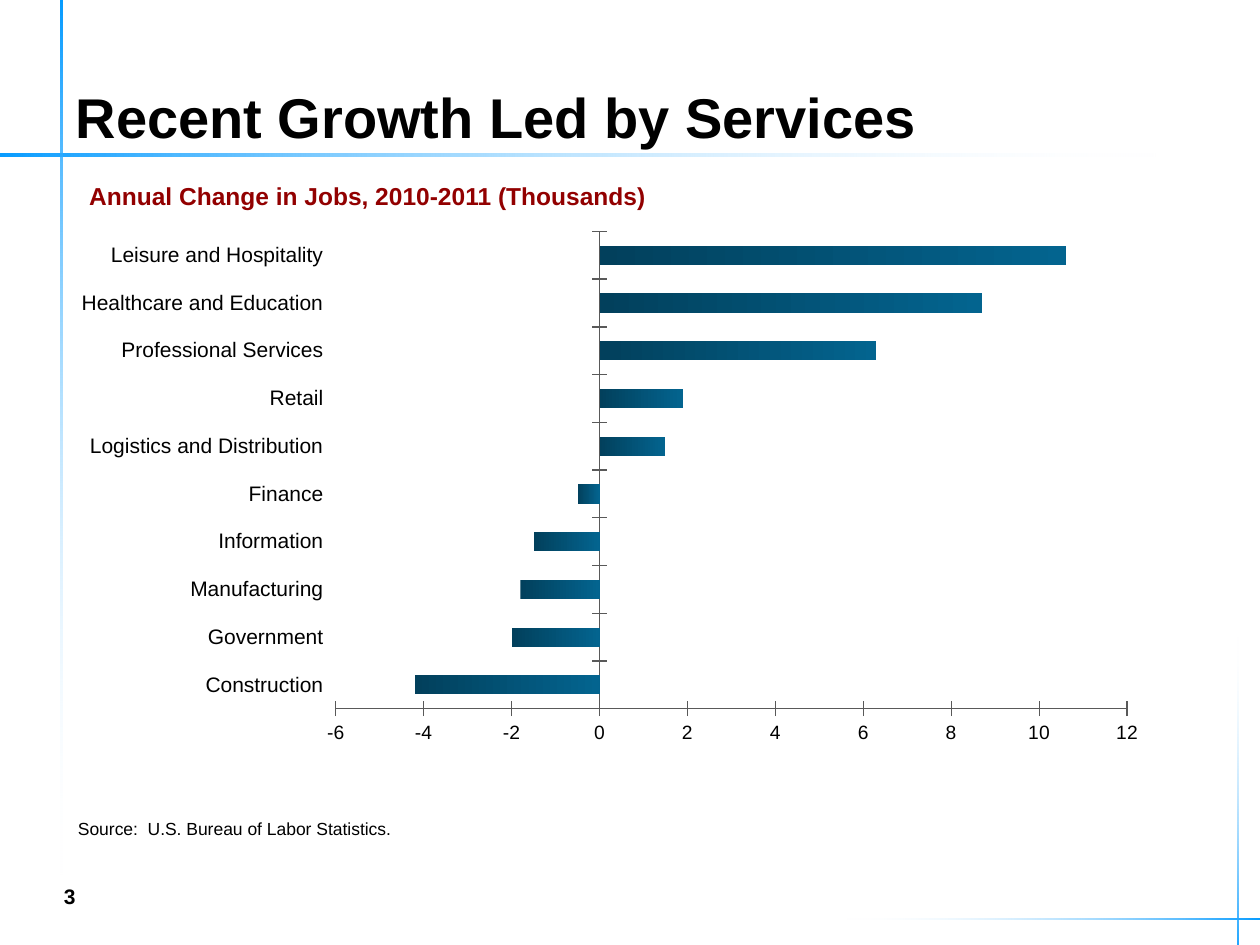
from typing import NamedTuple

from lxml.etree import SubElement
from pptx import Presentation
from pptx.chart.data import CategoryChartData
from pptx.dml.color import RGBColor
from pptx.enum.chart import XL_CHART_TYPE, XL_TICK_LABEL_POSITION, XL_TICK_MARK
from pptx.enum.shapes import MSO_SHAPE
from pptx.enum.text import MSO_ANCHOR, MSO_AUTO_SIZE, PP_ALIGN
from pptx.oxml import parse_xml
from pptx.oxml.ns import nsdecls, qn
from pptx.util import Inches, Pt

FONT = "Arial"
BLACK = "000000"
RULE_BLUE = "0099FF"


class Rule(NamedTuple):
    left: float
    top: float
    width: float
    height: float
    rotation: int


class Label(NamedTuple):
    text: str
    left: float
    top: float
    width: float
    height: float
    size: int
    color: str = BLACK
    bold: bool = False
    anchor: MSO_ANCHOR = MSO_ANCHOR.TOP


RULES = [
    Rule(4.52, -3.47, 0.02, 9.4, 270),
    Rule(0.48, -0.09, 0.02, 7.07, 0),
    Rule(8.38, 5.62, 0.01, 3.35, 90),
    Rule(9.82, 5.04, 0.01, 2.64, 180),
]

LABELS = [
    Label("Source:  U.S. Bureau of Labor Statistics.", 0.52, 6.44, 6.25, 0.27, 10),
    Label("Annual Change in Jobs, 2010-2011 (Thousands)",
          0.61, 1.39, 6.06, 0.34, 14, "920000", True),
    Label("3", 0.41, 6.91, 0.73, 0.4, 12, BLACK, True, MSO_ANCHOR.MIDDLE),
]

JOB_CHANGES = {
    "Construction": -4.2,
    "Government": -2,
    "Manufacturing": -1.8,
    "Information": -1.5,
    "Finance": -0.5,
    "Logistics and Distribution": 1.5,
    "Retail": 1.9,
    "Professional Services": 6.3,
    "Healthcare and Education": 8.7,
    "Leisure and Hospitality": 10.6,
}


def rgb(color: str) -> RGBColor:
    return RGBColor.from_string(color)


def style_font(font, size: int, color: str = BLACK, bold: bool = False) -> None:
    font.name = FONT
    font.size = Pt(size)
    font.bold = bold
    font.color.rgb = rgb(color)


def set_gradient(fill, start: str, end: str, angle: int) -> None:
    """Apply a two-stop gradient; the angle runs counter-clockwise."""
    fill.gradient()
    fill.gradient_angle = angle
    for stop, color, position in zip(fill.gradient_stops, (start, end), (0, 1)):
        stop.color.rgb = rgb(color)
        stop.position = position


def add_rule(slide, rule: Rule) -> None:
    """Draw a thin bar that fades from blue to transparent."""
    bar = slide.shapes.add_shape(
        MSO_SHAPE.RECTANGLE, Inches(rule.left), Inches(rule.top),
        Inches(rule.width), Inches(rule.height))
    bar.rotation = rule.rotation
    bar.shadow.inherit = False
    bar.line.fill.background()
    set_gradient(bar.fill, RULE_BLUE, "FFFFFF", 270)
    faded_color = bar.fill._xPr.findall(".//" + qn("a:srgbClr"))[-1]
    SubElement(faded_color, qn("a:alpha"), val="0")


def add_label(slide, label: Label) -> None:
    box = slide.shapes.add_textbox(
        Inches(label.left), Inches(label.top), Inches(label.width), Inches(label.height))
    frame = box.text_frame
    frame.word_wrap = True
    frame.vertical_anchor = label.anchor
    frame.text = label.text
    style_font(frame.paragraphs[0].runs[0].font, label.size, label.color, label.bold)


def set_title(slide, text: str) -> None:
    title = slide.shapes.title
    title.left, title.top = Inches(0.5), Inches(-0.01)
    title.width, title.height = Inches(9), Inches(1.25)
    frame = title.text_frame
    frame.text = text
    frame.auto_size = MSO_AUTO_SIZE.NONE
    frame.vertical_anchor = MSO_ANCHOR.BOTTOM
    heading = frame.paragraphs[0]
    heading.alignment = PP_ALIGN.LEFT
    style_font(heading.runs[0].font, 32, bold=True)


def style_axis(axis, size: int) -> None:
    axis.has_major_gridlines = False
    axis.major_tick_mark = XL_TICK_MARK.CROSS
    axis.minor_tick_mark = XL_TICK_MARK.NONE
    axis.format.line.color.rgb = rgb("595959")
    axis.format.line.width = Pt(0.75)
    style_font(axis.tick_labels.font, size)


def set_plot_area(chart, x: float, y: float, w: float, h: float) -> None:
    """Fix the inner plot area, in fractions of the chart."""
    plot_area = chart._chartSpace.chart.plotArea
    for old_layout in plot_area.findall(qn("c:layout")):
        plot_area.remove(old_layout)
    sizes = "".join(f'<c:{tag} val="{value}"/>'
                    for tag, value in zip("xywh", (x, y, w, h)))
    plot_area.insert(0, parse_xml(
        f'<c:layout {nsdecls("c")}><c:manualLayout><c:layoutTarget val="inner"/>'
        f'<c:xMode val="edge"/><c:yMode val="edge"/>{sizes}'
        '</c:manualLayout></c:layout>'))


def add_jobs_chart(slide) -> None:
    jobs = CategoryChartData()
    jobs.categories = list(JOB_CHANGES)
    jobs.add_series("Series 1", list(JOB_CHANGES.values()))
    chart = slide.shapes.add_chart(
        XL_CHART_TYPE.BAR_CLUSTERED, Inches(0.39), Inches(1.6),
        Inches(9.21), Inches(4.94), jobs).chart
    chart.has_legend = False
    chart.has_title = False
    style_font(chart.font, 11)

    style_axis(chart.category_axis, 12)
    chart.category_axis.tick_label_position = XL_TICK_LABEL_POSITION.LOW
    change_axis = chart.value_axis
    style_axis(change_axis, 11)
    change_axis.minimum_scale = -6
    change_axis.maximum_scale = 12
    change_axis.major_unit = 2
    change_axis.tick_labels.number_format = "#,##0"
    change_axis.tick_labels.number_format_is_linked = False

    plot = chart.plots[0]
    plot.vary_by_categories = False
    plot.gap_width = 150
    bars = plot.series[0]
    bars.invert_if_negative = False
    set_gradient(bars.format.fill, "02405C", "03648F", 0)
    set_plot_area(chart, 0.247, 0.048, 0.682, 0.767)


def main() -> None:
    deck = Presentation()
    deck.slide_width, deck.slide_height = Inches(10), Inches(7.5)
    slide = deck.slides.add_slide(deck.slide_layouts[5])
    for rule in RULES:
        add_rule(slide, rule)
    set_title(slide, "Recent Growth Led by Services")
    add_jobs_chart(slide)
    for label in LABELS:
        add_label(slide, label)
    deck.save("out.pptx")


if __name__ == "__main__":
    main()
